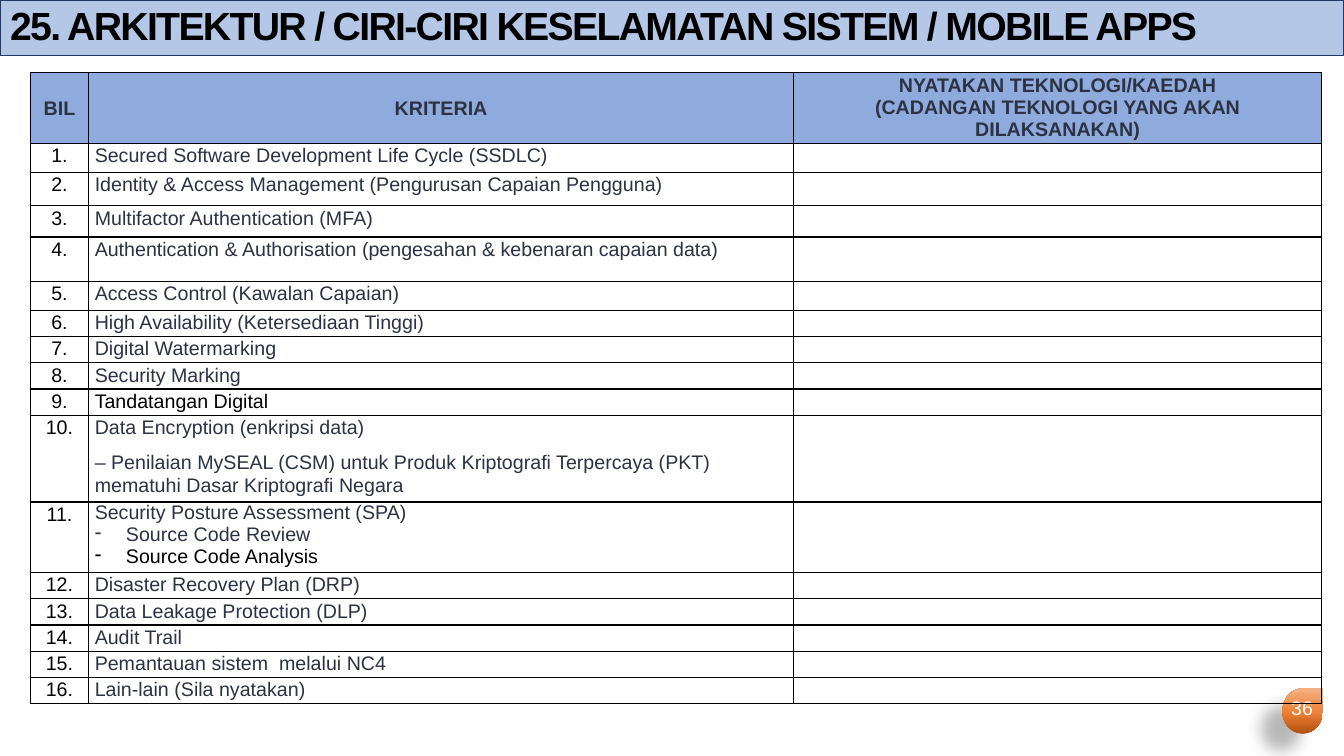
from lxml import etree
from pptx import Presentation
from pptx.dml.color import RGBColor
from pptx.enum.shapes import MSO_SHAPE
from pptx.enum.text import MSO_ANCHOR, MSO_AUTO_SIZE, PP_ALIGN
from pptx.oxml import parse_xml
from pptx.oxml.ns import nsdecls, qn
from pptx.util import Inches, Pt

LEFT, CENTER = PP_ALIGN.LEFT, PP_ALIGN.CENTER
TOP, MIDDLE = MSO_ANCHOR.TOP, MSO_ANCHOR.MIDDLE
TEARDROP = MSO_SHAPE.TEAR

TITLE = "25. ARKITEKTUR / CIRI-CIRI KESELAMATAN SISTEM / MOBILE APPS"
PAGE = "36"
HEADERS = [
    ["BIL"],
    ["KRITERIA"],
    ["NYATAKAN TEKNOLOGI/KAEDAH", "(CADANGAN TEKNOLOGI YANG AKAN DILAKSANAKAN)"],
]
# Row height and paragraphs; a leading "- " makes a bullet
SHORT = 0.26
CRITERIA = [
    (0.29, ["Secured Software Development Life Cycle (SSDLC)"]),
    (0.33, ["Identity & Access Management (Pengurusan Capaian Pengguna)"]),
    (0.31, ["Multifactor Authentication (MFA)"]),
    (0.44, ["Authentication & Authorisation (pengesahan & kebenaran capaian data)"]),
    (0.29, ["Access Control (Kawalan Capaian)"]),
    (SHORT, ["High Availability (Ketersediaan Tinggi)"]),
    (SHORT, ["Digital Watermarking"]),
    (SHORT, ["Security Marking"]),
    (SHORT, ["Tandatangan Digital"]),
    (0.85, ["Data Encryption (enkripsi data)",
            "– Penilaian MySEAL (CSM) untuk Produk Kriptografi Terpercaya (PKT) "
            "mematuhi Dasar Kriptografi Negara"]),
    (0.69, ["Security Posture Assessment (SPA)",
            "- Source Code Review", "- Source Code Analysis"]),
    (SHORT, ["Disaster Recovery Plan (DRP)"]),
    (SHORT, ["Data Leakage Protection (DLP)"]),
    (SHORT, ["Audit Trail"]),
    (SHORT, ["Pemantauan sistem  melalui NC4"]),
    (SHORT, ["Lain-lain (Sila nyatakan)"]),
]
BLACK_TEXTS = {"Tandatangan Digital", "- Source Code Analysis"}

COLORS = {
    "black": "000000", "white": "FFFFFF", "ink": "2C3242",
    "header": "8FAADC", "title": "B4C7E7", "title_line": "203864",
}
BADGE_STOPS = [(0, "B0500F"), (48, "EE8137"), (100, "F4B183")]
FONT = "Arial"
SLIDE_W, SLIDE_H = 13.33, 7.5
TABLE_LEFT, TABLE_TOP = 0.3, 0.72
COLUMNS = [0.58, 6.99, 5.24]
HEADER_H = 0.7
BULLET_INDENT = Inches(0.31)


def rgb(name):
    return RGBColor.from_string(COLORS[name])


def style(p, size, color, bold=False, align=LEFT):
    p.alignment = align
    f = p.font
    f.name, f.size, f.bold = FONT, Pt(size), bold
    f.color.rgb = rgb(color)


def add_borders(cell):
    tc_pr = cell._tc.get_or_add_tcPr()
    for i, side in enumerate("LRTB"):
        tc_pr.insert(i, parse_xml(
            f'<a:ln{side} {nsdecls("a")} w="12700"><a:solidFill>'
            f'<a:srgbClr val="{COLORS["black"]}"/></a:solidFill></a:ln{side}>'))


def add_bullet(p):
    p_pr = p._p.get_or_add_pPr()
    p_pr.set("marL", str(BULLET_INDENT))
    p_pr.set("indent", str(-BULLET_INDENT))
    p_pr.insert_element_before(
        parse_xml(f'<a:buChar {nsdecls("a")} char="-"/>'), "a:tabLst", "a:defRPr")


def fill_cell(cell, texts, color="ink", header=False, align=LEFT, loose=True):
    """Write the paragraphs; loose ones have wider lines and space after."""
    cell.margin_left = cell.margin_right = Inches(0.06)
    cell.margin_top = cell.margin_bottom = 0
    cell.vertical_anchor = MIDDLE if header else TOP
    add_borders(cell)
    if header:
        cell.fill.solid()
        cell.fill.fore_color.rgb = rgb("header")
    else:
        cell.fill.background()
    tf = cell.text_frame
    for i, text in enumerate(texts):
        p = tf.add_paragraph() if i else tf.paragraphs[0]
        p.text = text.removeprefix("- ")
        style(p, 14, "black" if text in BLACK_TEXTS else color, header, align)
        if loose:
            p.line_spacing, p.space_after = 1.07, Pt(8)
        if text.startswith("- "):
            add_bullet(p)
    if not texts:
        end = etree.SubElement(tf.paragraphs[0]._p, qn("a:endParaRPr"))
        end.set("sz", "1400")


def add_title(slide):
    sp = slide.shapes.title
    sp.left = sp.top = 0
    sp.width, sp.height = Inches(SLIDE_W), Inches(0.55)
    sp.fill.solid()
    sp.fill.fore_color.rgb = rgb("title")
    sp.line.color.rgb = rgb("title_line")
    sp.line.width = Pt(0.75)
    tf = sp.text_frame
    tf.text = TITLE
    tf.auto_size, tf.vertical_anchor = MSO_AUTO_SIZE.NONE, MIDDLE
    p = tf.paragraphs[0]
    style(p, 28, "black", bold=True)
    p.line_spacing = 0.9
    p.runs[0].font._element.set("spc", "-120")


def add_page_badge(slide):
    sp = slide.shapes.add_shape(
        TEARDROP, Inches(12.72), Inches(6.83), Inches(0.4), Inches(0.45))
    sp.line.fill.background()
    stops = "".join(f'<a:gs pos="{pos * 1000}"><a:srgbClr val="{color}"/></a:gs>'
                    for pos, color in BADGE_STOPS)
    sp_pr = sp._element.spPr
    sp_pr.insert_element_before(parse_xml(
        f'<a:gradFill {nsdecls("a")} rotWithShape="1"><a:gsLst>{stops}</a:gsLst>'
        '<a:lin ang="16200000" scaled="0"/></a:gradFill>'), "a:ln")
    sp_pr.append(parse_xml(
        f'<a:effectLst {nsdecls("a")}><a:outerShdw blurRad="{Pt(11.8)}" '
        f'dist="{Pt(19.7)}" dir="{141 * 60000}" rotWithShape="0">'
        f'<a:srgbClr val="{COLORS["black"]}"><a:alpha val="28000"/></a:srgbClr>'
        '</a:outerShdw></a:effectLst>'))

    number = slide.shapes.add_textbox(
        Inches(12.67), Inches(6.86), Inches(0.49), Inches(0.4))
    tf = number.text_frame
    tf.word_wrap = True
    tf.text = PAGE
    style(tf.paragraphs[0], 14, "white", align=CENTER)


def add_criteria_table(slide):
    heights = [HEADER_H] + [h for h, _ in CRITERIA]
    table = slide.shapes.add_table(
        len(heights), len(COLUMNS), Inches(TABLE_LEFT), Inches(TABLE_TOP),
        Inches(sum(COLUMNS)), Inches(sum(heights))).table
    table.first_row = table.horz_banding = False
    for col, width in zip(table.columns, COLUMNS):
        col.width = Inches(width)
    for row, height in zip(table.rows, heights):
        row.height = Inches(height)
    for c, texts in enumerate(HEADERS):
        fill_cell(table.cell(0, c), texts, header=True, align=CENTER,
                  loose=len(texts) == 1)
    for r, (_, texts) in enumerate(CRITERIA, start=1):
        fill_cell(table.cell(r, 0), [f"{r}."], color="black", align=CENTER)
        fill_cell(table.cell(r, 1), texts, loose=len(texts) < 3)
        fill_cell(table.cell(r, 2), [])


def main():
    prs = Presentation()
    prs.slide_width, prs.slide_height = Inches(SLIDE_W), Inches(SLIDE_H)
    slide = prs.slides.add_slide(prs.slide_layouts[5])
    add_page_badge(slide)
    add_title(slide)
    add_criteria_table(slide)
    prs.save("out.pptx")


if __name__ == "__main__":
    main()
